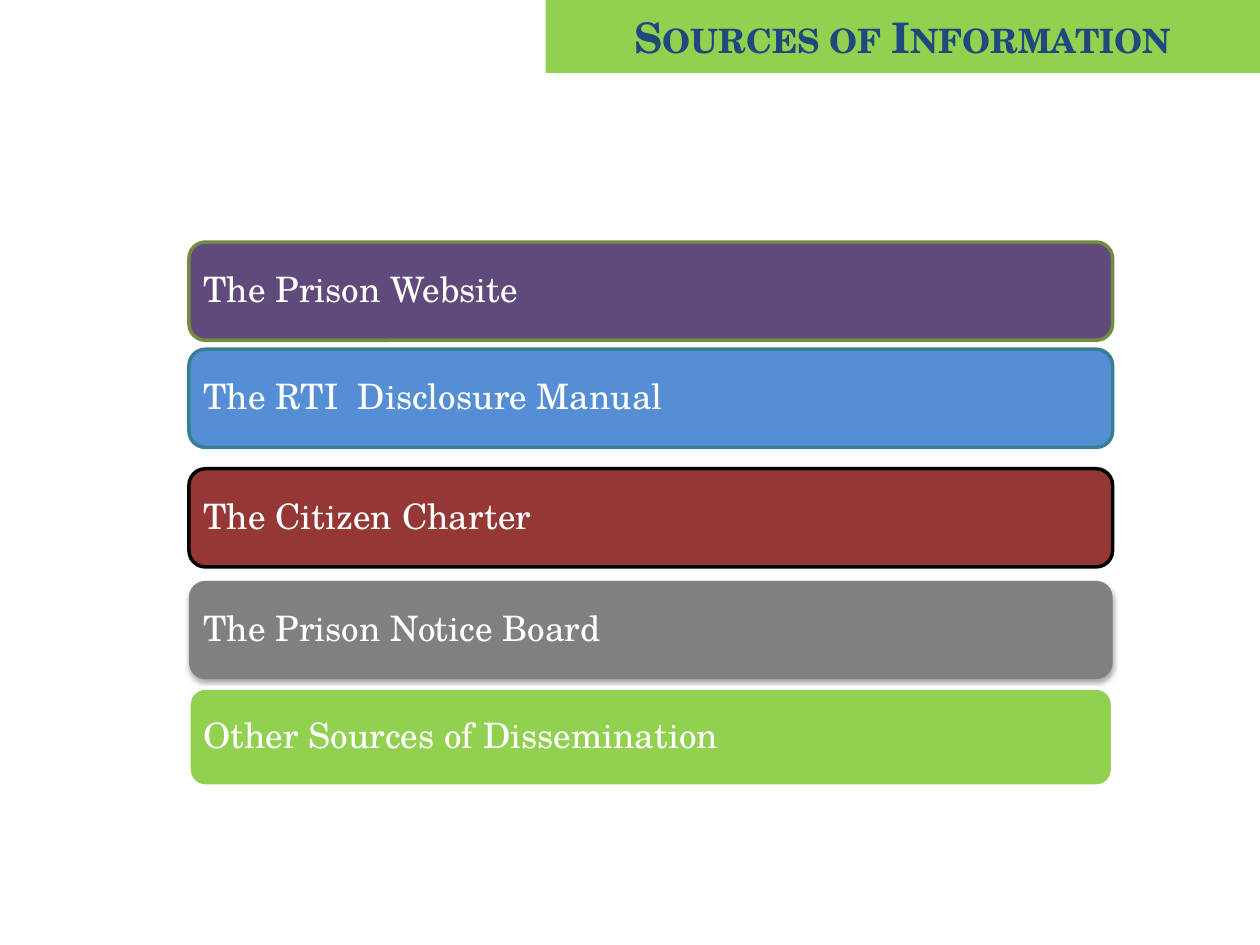
from lxml.etree import SubElement
from pptx import Presentation
from pptx.dml.color import RGBColor
from pptx.enum.shapes import MSO_SHAPE as Shape
from pptx.enum.text import MSO_ANCHOR as Anchor, PP_ALIGN as Align
from pptx.oxml.ns import qn
from pptx.util import Cm, Pt

FONT = "TeX Gyre Schola"
COLORS = {
    "green": "92D050", "navy": "1F497D", "white": "FFFFFF", "black": "000000",
    "purple": "604A7B", "olive": "738A42", "blue": "558ED5", "teal": "377F92",
    "red": "953735", "gray": "808080",
}
TITLE = "Sources of Information"
# text, top in cm, fill, outline (None: a shadow takes its place)
SOURCES = [
    ("The Prison Website", 4.88, "purple", "olive"),
    ("The RTI  Disclosure Manual", 7.04, "blue", "teal"),
    ("The Citizen Charter", 9.45, "red", "black"),
    ("The Prison Notice Board", 11.71, "gray", None),
    ("Other Sources of Dissemination", 13.87, "green", "white"),
]
BAR_LEFT, BAR_WIDTH, BAR_HEIGHT = 3.81, 18.62, 1.98


def color(name):
    return RGBColor.from_string(COLORS[name])


def add_box(slide, kind, box, fill, outline, text, size, text_color, align):
    shape = slide.shapes.add_shape(kind, *map(Cm, box))
    shape.shadow.inherit = False
    shape.fill.solid()
    shape.fill.fore_color.rgb = color(fill)
    if outline:
        shape.line.color.rgb = color(outline)
        shape.line.width = Pt(2)
    else:
        shape.line.fill.background()
    frame = shape.text_frame
    frame.word_wrap = True
    frame.vertical_anchor = Anchor.MIDDLE
    frame.margin_left = frame.margin_right = Cm(0.2)
    frame.margin_top = frame.margin_bottom = Cm(0.2)
    paragraph = frame.paragraphs[0]
    paragraph.text = text
    paragraph.alignment = align
    font = paragraph.font
    font.name, font.size = FONT, Pt(size)
    font.color.rgb = color(text_color)
    return shape


def add_drop_shadow(shape):
    effects = shape._element.spPr.find(qn("a:effectLst"))
    shadow = SubElement(effects, qn("a:outerShdw"), blurRad=str(Pt(3.1)),
                        dist=str(Pt(1.8)), dir="5400000", rotWithShape="0")
    tint = SubElement(shadow, qn("a:srgbClr"), val=COLORS["black"])
    SubElement(tint, qn("a:alpha"), val="35000")


presentation = Presentation()
presentation.slide_width, presentation.slide_height = Cm(25.4), Cm(19.05)
slide = presentation.slides.add_slide(presentation.slide_layouts[6])

title = add_box(slide, Shape.RECTANGLE, (11, 0, 14.4, 1.47), "green", None,
                TITLE, 24, "navy", Align.CENTER)
heading = title.text_frame.paragraphs[0]
heading.font.bold = True
heading.runs[0]._r.get_or_add_rPr().set("cap", "small")

for text, top, fill, outline in SOURCES:
    bar = add_box(slide, Shape.ROUNDED_RECTANGLE,
                  (BAR_LEFT, top, BAR_WIDTH, BAR_HEIGHT), fill, outline,
                  text, 20, "white", Align.LEFT)
    bar.text_frame.paragraphs[0].line_spacing = 0.9
    if outline is None:
        add_drop_shadow(bar)

presentation.save("out.pptx")
